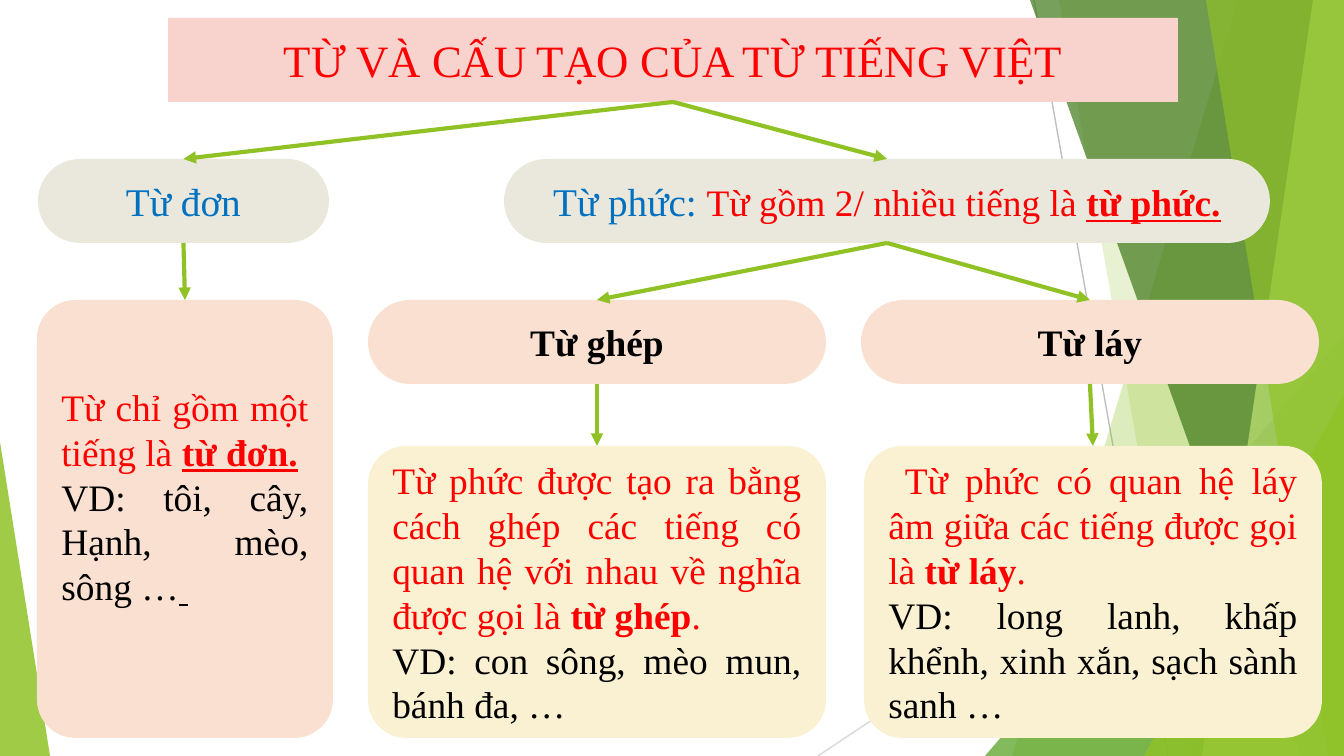
from pptx import Presentation
from pptx.dml.color import RGBColor
from pptx.enum import shapes, text
from pptx.oxml import parse_xml
from pptx.oxml.ns import nsdecls, qn
from pptx.util import Emu, Pt
from lxml import etree

W, H = 1344, 756
SCALE = 9144000 / W
FONT = "Times New Roman"
TOP, BOTTOM = 0, 2
PLAIN, BOLD, BOLD_UNDERLINE = (False, False), (True, False), (True, True)

RED = RGBColor(0xFF, 0x00, 0x00)
BLUE = RGBColor(0x00, 0x70, 0xC0)
BLACK = RGBColor(0x00, 0x00, 0x00)
PINK = RGBColor(0xF8, 0xD2, 0xCC)
STONE = RGBColor(0xEA, 0xE8, 0xDC)
PEACH = RGBColor(0xFA, 0xE0, 0xD1)
CREAM = RGBColor(0xFA, 0xF1, 0xD2)
GREEN = RGBColor(0x90, 0xC2, 0x26)
MID_GREEN = RGBColor(0x54, 0xA0, 0x21)
DARK_GREEN = RGBColor(0x3F, 0x78, 0x19)
LIGHT_GREEN = RGBColor(0xC0, 0xE4, 0x74)
GREY = RGBColor(0xBF, 0xBF, 0xBF)
LIGHT_GREY = RGBColor(0xD9, 0xD9, 0xD9)


def px(length):
    return Emu(round(length * SCALE))


def paint(shape, color, opacity=100):
    shape.shadow.inherit = False
    shape.fill.solid()
    shape.fill.fore_color.rgb = color
    shape.line.fill.background()
    if opacity < 100:
        srgb = shape._element.spPr.find(qn("a:solidFill"))[0]
        etree.SubElement(srgb, qn("a:alpha"), val=str(opacity * 1000))


def add_band(slide, top_x, bottom_x, color, opacity):
    """Fill the area between a slanted left edge and the slide's right edge."""
    builder = slide.shapes.build_freeform(top_x, 0, scale=SCALE)
    builder.add_line_segments([(W, 0), (W, H), (bottom_x, H)])
    paint(builder.convert_to_shape(), color, opacity)


def add_corner(slide, left, top, width, apex, color, opacity):
    """Stand a right-angled triangle on the slide's bottom edge."""
    corner = slide.shapes.add_shape(
        shapes.MSO_SHAPE.ISOSCELES_TRIANGLE,
        px(left), px(top), px(width), px(H - top))
    corner.adjustments[0] = apex
    paint(corner, color, opacity)


def add_line(slide, start, end, color, width):
    line = slide.shapes.add_connector(
        shapes.MSO_CONNECTOR.STRAIGHT, *map(px, start + end))
    line.line.color.rgb = color
    line.line.width = Pt(width)
    etree.SubElement(line._element.spPr, qn("a:effectLst"))
    return line


def add_arrow(slide, parent, child):
    arrow = add_line(slide, (0, 0), (0, 0), GREEN, 2.25)
    arrow.begin_connect(parent, BOTTOM)
    arrow.end_connect(child, TOP)
    etree.SubElement(arrow.line._get_or_add_ln(), qn("a:tailEnd"),
                     type="triangle")


def write(shape, paragraphs, size, align=text.PP_ALIGN.CENTER):
    """Fill a shape with paragraphs of (color, [(words, style), ...])."""
    frame = shape.text_frame
    frame.word_wrap = True
    frame.auto_size = text.MSO_AUTO_SIZE.NONE
    frame.vertical_anchor = text.MSO_ANCHOR.MIDDLE
    for index, (color, runs) in enumerate(paragraphs):
        paragraph = frame.add_paragraph() if index else frame.paragraphs[0]
        paragraph.alignment = align
        paragraph.font.name = FONT
        paragraph.font.size = Pt(size)
        paragraph.font.color.rgb = color
        for words, (bold, underline) in runs:
            run = paragraph.add_run()
            run.text = words
            run.font.bold = bold
            run.font.underline = underline


def add_box(slide, left, top, width, height, fill, rounding=0.5):
    box = slide.shapes.add_shape(shapes.MSO_SHAPE.ROUNDED_RECTANGLE,
                                 px(left), px(top), px(width), px(height))
    box.adjustments[0] = rounding
    paint(box, fill)
    return box


def add_heading(slide, left, top, width, fill, color, words, size, style):
    heading = add_box(slide, left, top, width, 84, fill)
    write(heading, [(color, [(words, style)])], size)
    return heading


def add_card(slide, left, top, width, fill, definition, examples):
    card = add_box(slide, left, top, width, 738 - top, fill, 0.13)
    write(card, [(RED, definition), (BLACK, examples)], 20,
          text.PP_ALIGN.JUSTIFY)
    return card


def place_title(slide, words):
    title = slide.shapes.title
    title.left, title.top = px(168), px(18)
    title.width, title.height = px(1010), px(84)
    title._element.spPr.append(parse_xml(
        f'<a:prstGeom {nsdecls("a")} prst="roundRect"><a:avLst>'
        '<a:gd name="adj" fmla="val 50000"/></a:avLst></a:prstGeom>'))
    paint(title, PINK)
    write(title, [(RED, [(words, PLAIN)])], 24)
    slide.shapes._spTree.append(title._element)  # in front of the backdrop
    return title


def add_backdrop(slide):
    add_line(slide, (1034, 0), (1168, H), GREY, 0.75)
    add_line(slide, (W, 406), (818, H), LIGHT_GREY, 0.75)
    add_band(slide, 1238, 1012, GREEN, 30)
    add_band(slide, 1059, 1192, GREEN, 20)
    add_corner(slide, 985, 336, 359, 1, MID_GREEN, 72)
    add_band(slide, 1030, 1301, DARK_GREEN, 70)
    add_band(slide, 1313, 1202, LIGHT_GREEN, 70)
    add_band(slide, 1206, 1328, GREEN, 65)
    add_corner(slide, 1144, 395, 200, 1, GREEN, 80)
    add_corner(slide, 0, 442, 50, 0, GREEN, 85)


def main():
    deck = Presentation()
    deck.slide_width, deck.slide_height = px(W), px(H)
    slide = deck.slides.add_slide(deck.slide_layouts.get_by_name("Title Only"))
    add_backdrop(slide)
    title = place_title(slide, "TỪ VÀ CẤU TẠO CỦA TỪ TIẾNG VIỆT")

    single = add_heading(slide, 38, 159, 291, STONE, BLUE, "Từ đơn", 21, PLAIN)
    complex_word = add_box(slide, 504, 159, 766, 84, STONE)
    write(complex_word, [(RED, [("Từ phức: ", PLAIN),
                                ("Từ gồm 2/ nhiều tiếng là ", PLAIN),
                                ("từ phức.", BOLD_UNDERLINE)])], 20)
    term = complex_word.text_frame.paragraphs[0].runs[0].font
    term.size, term.color.rgb = Pt(21), BLUE
    compound, reduplicative = (
        add_heading(slide, left, 300, 458, PEACH, BLACK, words, 20, BOLD)
        for left, words in ((368, "Từ ghép"), (861, "Từ láy")))

    single_card = add_card(
        slide, 37, 300, 296, PEACH,
        [("Từ chỉ gồm một tiếng là ", PLAIN), ("từ đơn.", BOLD_UNDERLINE)],
        [("VD: tôi, cây, Hạnh, mèo, sông …", PLAIN), (" ", BOLD_UNDERLINE)])
    single_card.text_frame.margin_bottom = px(52)
    compound_card = add_card(
        slide, 368, 446, 458, CREAM,
        [("Từ phức được tạo ra bằng cách ghép các tiếng có quan hệ với nhau "
          "về nghĩa được gọi là ", PLAIN), ("từ ghép", BOLD), (". ", PLAIN)],
        [("VD: con sông, mèo mun, bánh đa, …", PLAIN)])
    reduplicative_card = add_card(
        slide, 864, 446, 458, CREAM,
        [(" Từ phức có quan hệ láy âm giữa các tiếng được gọi là ", PLAIN),
         ("từ láy", BOLD), (".", PLAIN)],
        [("VD: long lanh, khấp khểnh, xinh xắn, sạch sành sanh …", PLAIN)])

    for parent, child in ((title, single), (title, complex_word),
                          (single, single_card),
                          (complex_word, compound),
                          (complex_word, reduplicative),
                          (compound, compound_card),
                          (reduplicative, reduplicative_card)):
        add_arrow(slide, parent, child)
    deck.save("out.pptx")


if __name__ == "__main__":
    main()
